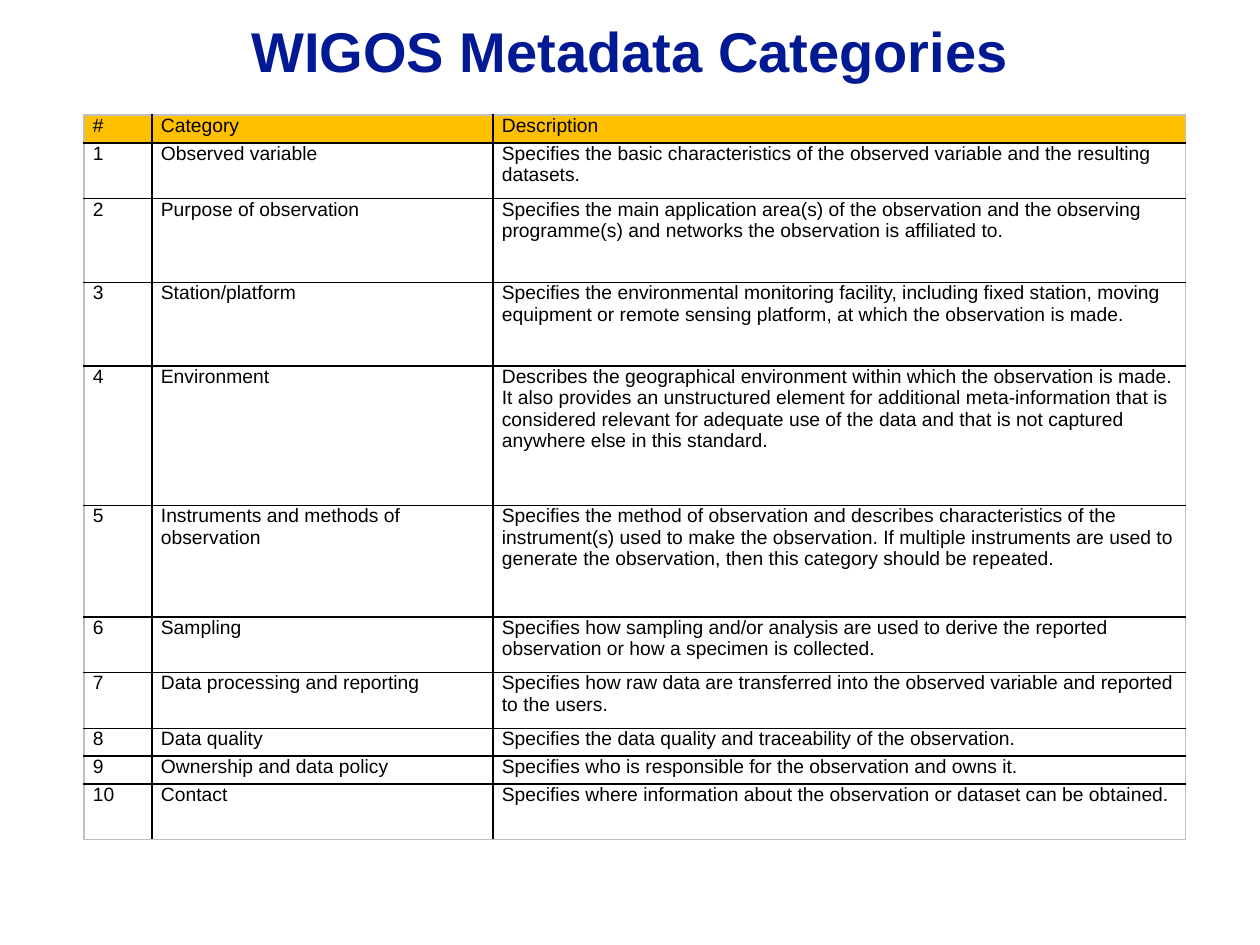
from lxml.etree import SubElement as Sub
from pptx import Presentation
from pptx.dml.color import RGBColor as Rgb
from pptx.enum.text import MSO_ANCHOR as Anchor, PP_ALIGN as Align
from pptx.oxml.ns import qn
from pptx.util import Pt

PX = 7257  # EMU in one px, 126 px to the inch

THEME = {
    "head": {"name": "Arial", "size": Pt(32), "bold": True,
             "color": Rgb.from_string("011993")},
    "cell": {"name": "Arial", "size": Pt(11), "bold": False,
             "color": Rgb.from_string("000000")},
    "band": Rgb.from_string("FFC000"),
    "rule": ("000000", Pt(1)),
    "edge": ("BFBFBF", Pt(0.75)),
}

COLS = (68, 341, 693)
# Category, description, row height in units
ROWS = [
    ("Observed variable", "Specifies the basic characteristics of the observed "
     "variable and the resulting datasets.", 2),
    ("Purpose of observation", "Specifies the main application area(s) of the "
     "observation and the observing programme(s) and networks the observation "
     "is affiliated to.", 3),
    ("Station/platform", "Specifies the environmental monitoring facility, "
     "including fixed station, moving equipment or remote sensing platform, "
     "at which the observation is made.", 3),
    ("Environment", "Describes the geographical environment within which the "
     "observation is made. It also provides an unstructured element for "
     "additional meta-information that is considered relevant for adequate use "
     "of the data and that is not captured anywhere else in this standard.", 5),
    ("Instruments and methods of observation", "Specifies the method of "
     "observation and describes characteristics of the instrument(s) used to "
     "make the observation. If multiple instruments are used to generate the "
     "observation, then this category should be repeated.", 4),
    ("Sampling", "Specifies how sampling and/or analysis are used to derive the "
     "reported observation or how a specimen is collected.", 2),
    ("Data processing and reporting", "Specifies how raw data are transferred "
     "into the observed variable and reported to the users.", 2),
    ("Data quality", "Specifies the data quality and traceability of the "
     "observation.", 1),
    ("Ownership and data policy", "Specifies who is responsible for the "
     "observation and owns it.", 1),
    ("Contact", "Specifies where information about the observation or dataset "
     "can be obtained.", 2),
]


def style(font, look):
    for key, val in look.items():
        if key == "color":
            font.color.rgb = val
        else:
            setattr(font, key, val)


def border(cell, tag, rule):
    color, width = rule
    line = Sub(cell._tc.get_or_add_tcPr(), qn("a:" + tag), w=str(int(width)))
    Sub(Sub(line, qn("a:solidFill")), qn("a:srgbClr"), val=color)


def add_title(slide, box, text):
    title = slide.shapes.title
    for key, val in zip(("left", "top", "width", "height"), box):
        setattr(title, key, val * PX)
    frame = title.text_frame
    frame.text = text
    frame.vertical_anchor = Anchor.MIDDLE
    para = frame.paragraphs[0]
    para.alignment = Align.CENTER
    style(para.runs[0].font, THEME["head"])


def fill_cell(cell, text, sides, head):
    pads = {"margin_left": 9 * PX, "margin_right": 9 * PX,
            "margin_top": 0, "margin_bottom": 0}
    for key, val in pads.items():
        setattr(cell, key, val)
    cell.text = text
    style(cell.text_frame.paragraphs[0].runs[0].font, THEME["cell"])
    # Borders come before the fill in the cell properties
    for tag, outer in sides.items():
        border(cell, tag, THEME["edge" if outer else "rule"])
    if head:
        cell.fill.solid()
        cell.fill.fore_color.rgb = THEME["band"]
    else:
        cell.fill.background()


def add_grid(slide, box, cols, rows):
    lines = [("#", "Category", "Description", 1)]
    lines += [(str(n), *row) for n, row in enumerate(rows, 1)]
    left, top, width, height = (n * PX for n in box)
    table = slide.shapes.add_table(len(lines), len(cols), left, top,
                                   width, height).table
    table.first_row = table.horz_banding = False
    for col, size in zip(table.columns, cols):
        col.width = size * PX
    unit = height // sum(line[-1] for line in lines)
    for r, (*texts, units) in enumerate(lines):
        table.rows[r].height = unit * units
        for c, text in enumerate(texts):
            sides = {"lnL": c == 0, "lnR": c == len(cols) - 1,
                     "lnT": r == 0, "lnB": r == len(lines) - 1}
            fill_cell(table.cell(r, c), text, sides, r == 0)


def main():
    deck = Presentation()
    deck.slide_width, deck.slide_height = 1260 * PX, 945 * PX
    slide = deck.slides.add_slide(deck.slide_layouts[5])
    # Heading
    add_title(slide, (30, -5, 1200, 110), "WIGOS Metadata Categories")
    # Category table
    add_grid(slide, (84, 115, sum(COLS), 725), COLS, ROWS)
    deck.save("out.pptx")


if __name__ == "__main__":
    main()
